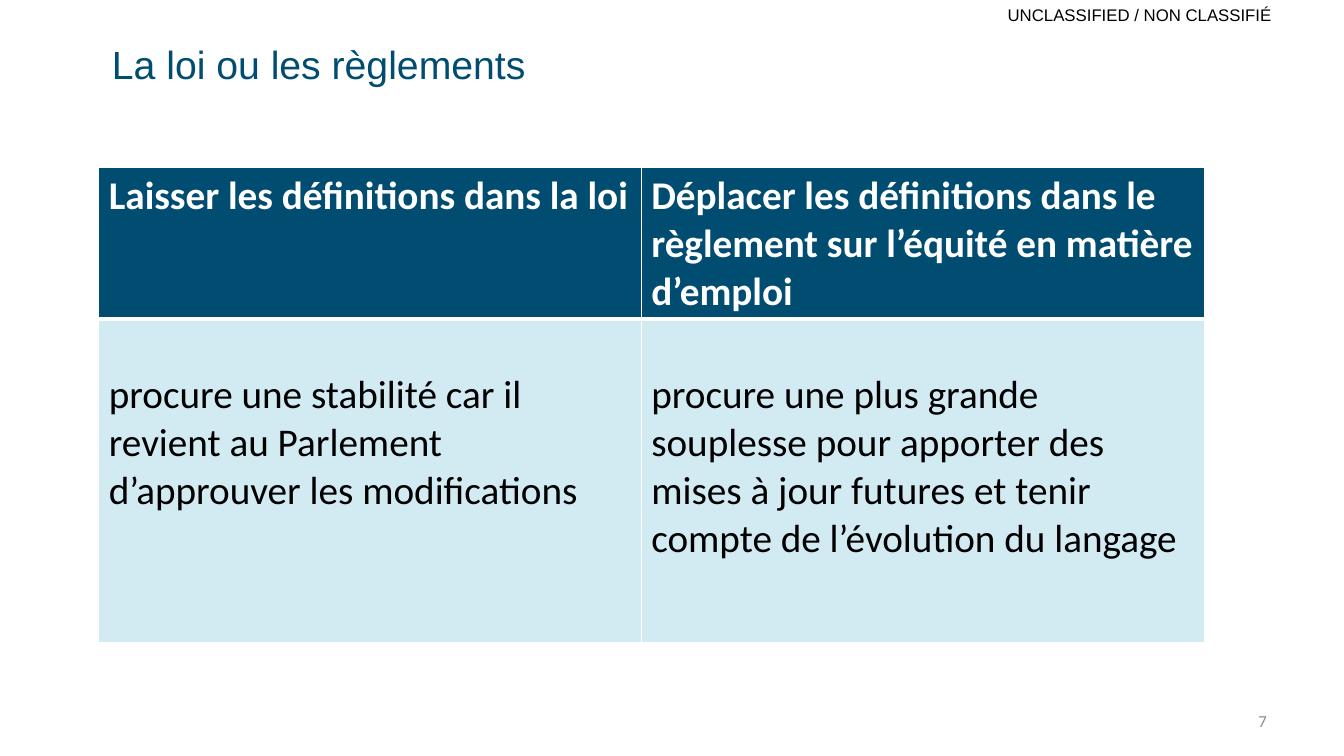
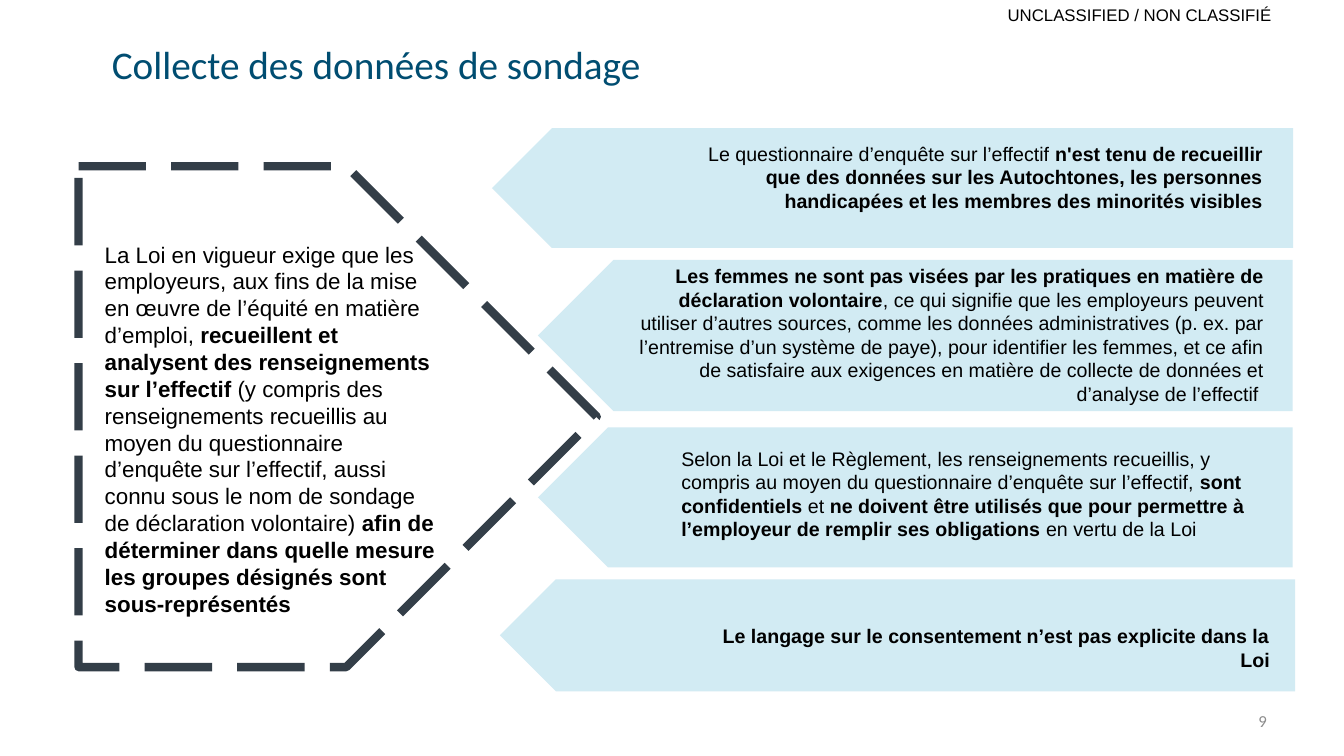
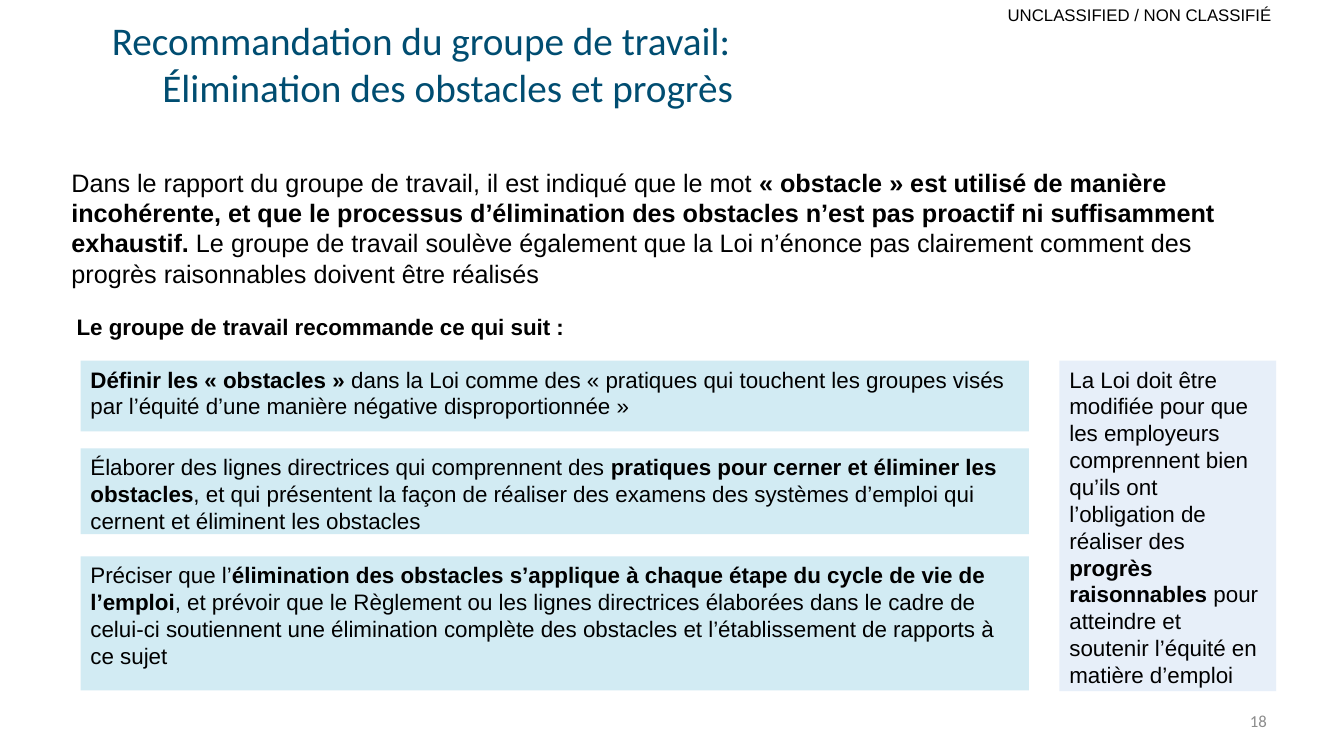
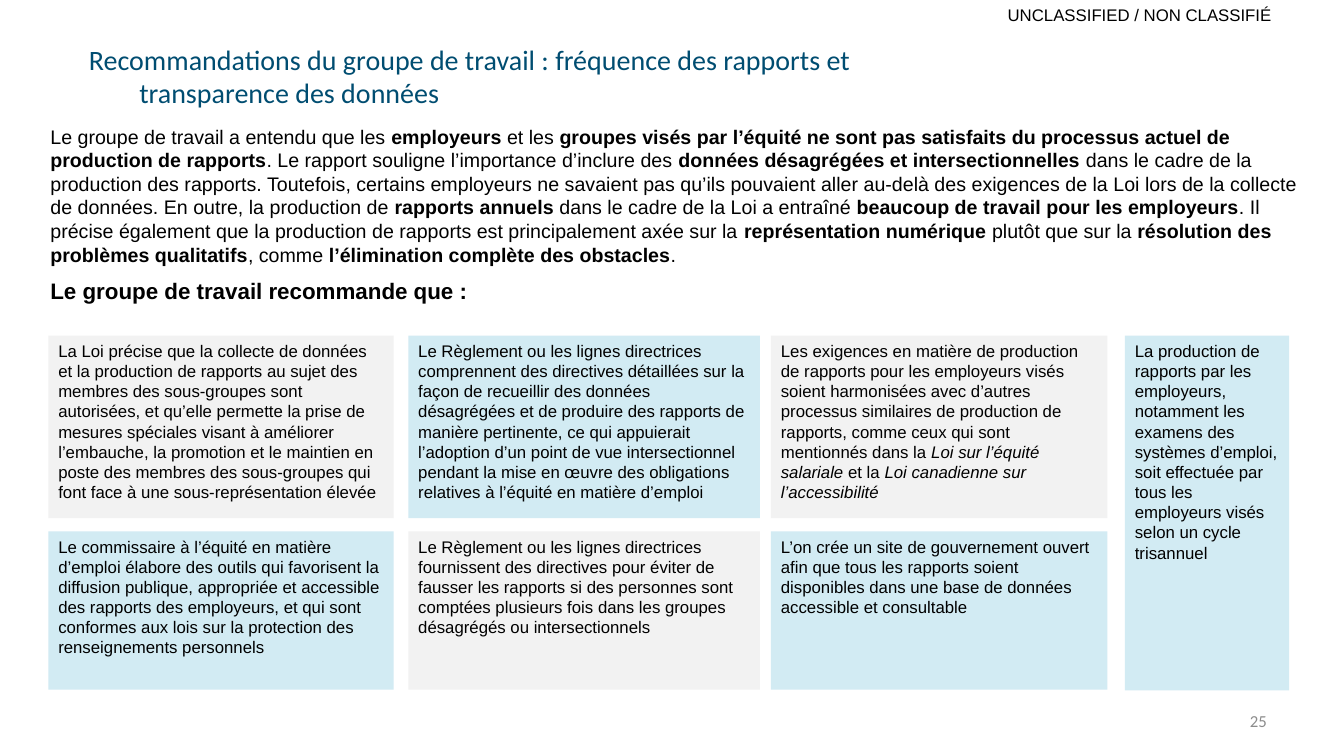
"""Build four slides on employment equity law: tables, arrows and recommendations."""
from lxml import etree
from pptx import Presentation
from pptx.dml.color import RGBColor
from pptx.enum import dml, shapes, text
from pptx.oxml.ns import qn
from pptx.util import Cm, Pt

HUES = {
    "navy": "004D71", "pale": "D2EBF3", "mist": "E7EFF9", "light": "F2F2F2",
    "slate": "333E48", "grey": "8C8C8C", "black": "000000", "white": "FFFFFF",
}
LEFT, RIGHT = text.PP_ALIGN.LEFT, text.PP_ALIGN.RIGHT
TOP, MIDDLE = text.MSO_ANCHOR.TOP, text.MSO_ANCHOR.MIDDLE


def write(frame, words, size, hue="black", face="Arial", align=LEFT, mark="bold"):
    """Fill a text frame; parts between bars take the mark."""
    frame.word_wrap = True
    para = frame.paragraphs[0]
    para.alignment = align
    for n, part in enumerate(words.split("|")):
        if part:
            run = para.add_run()
            run.text = part
            run.font.name, run.font.size = face, Pt(size)
            run.font.color.rgb = RGBColor.from_string(HUES[hue])
            setattr(run.font, mark, n % 2 == 1)
    return para


def box(slide, place, words, size, fill=None, anchor=TOP, **style):
    """Add a text box, or a filled rectangle when a fill is named."""
    spot = [Cm(v) for v in place]
    if fill:
        item = slide.shapes.add_shape(shapes.MSO_SHAPE.RECTANGLE, *spot)
        item.shadow.inherit = False
        item.fill.solid()
        item.fill.fore_color.rgb = RGBColor.from_string(HUES[fill])
        item.line.fill.background()
    else:
        item = slide.shapes.add_textbox(*spot)
    item.text_frame.vertical_anchor = anchor
    write(item.text_frame, words, size, **style)
    return item


deck = Presentation()
deck.slide_width, deck.slide_height = Cm(33.87), Cm(19.05)
plain = deck.slide_layouts[5]
head = plain.placeholders[0]
head.left, head.top, head.width, head.height = Cm(2.82), Cm(0.38), Cm(20.12), Cm(2.44)

heads = [
    ("7", "La loi ou les règlements", 28, "Arial"),
    ("9", "Collecte des données de sondage", 28, "Calibri"),
    ("18", "Recommandation du groupe de travail: Élimination des obstacles et progrès", 28, "Calibri"),
    ("25", "Recommandations du groupe de travail : fréquence des rapports et transparence des données", 20, "Calibri"),
]
for page, words, size, face in heads:
    slide = deck.slides.add_slide(plain)
    frame = slide.shapes.title.text_frame
    frame.auto_size = text.MSO_AUTO_SIZE.NONE
    frame.vertical_anchor = MIDDLE
    frame.margin_left = frame.margin_right = frame.margin_top = frame.margin_bottom = 0
    para = write(frame, words, size, "navy", face)
    props = para._p.get_or_add_pPr()
    props.set("marL", str(Cm(1.27)))
    props.set("indent", str(Cm(-1.27)))
    label = box(slide, (23.62, 0.13, 8.43, 0.51), "UNCLASSIFIED / NON CLASSIFIÉ", 12,
                anchor=MIDDLE, align=RIGHT).text_frame
    label.margin_left = label.margin_right = label.margin_top = label.margin_bottom = 0
    box(slide, (24.28, 17.65, 7.9, 1.02), page, 12, anchor=MIDDLE,
        hue="grey", face="Calibri", align=RIGHT)
law, survey, hurdles, reports = deck.slides

wides, talls = (13.67, 14.2), (3.78, 8.15)
grid = law.shapes.add_table(2, 2, Cm(2.49), Cm(4.22), Cm(sum(wides)), Cm(sum(talls))).table
grid.horz_banding = False
for n in range(2):
    grid.columns[n].width, grid.rows[n].height = Cm(wides[n]), Cm(talls[n])
rows = [
    ("|Laisser les définitions dans la loi|",
     "|Déplacer les définitions dans le règlement sur l’équité en matière d’emploi|"),
    ("procure une stabilité car il revient au Parlement d’approuver les modifications",
     "procure une plus grande souplesse pour apporter des mises à jour futures et tenir compte de l’évolution du langage"),
]
for r, row in enumerate(rows):
    for c, words in enumerate(row):
        cell = grid.cell(r, c)
        write(cell.text_frame, words, 28, ("white", "black")[r], "Calibri")
        cell.margin_top = Cm((0.13, 1.33)[r])
        props = cell._tc.get_or_add_tcPr()
        for side in "LRTB":
            thick = 3 if (r, side) in ((0, "B"), (1, "T")) else 1
            edge = etree.SubElement(props, qn("a:ln" + side), w=str(Pt(thick)))
            paint = etree.SubElement(edge, qn("a:solidFill"))
            etree.SubElement(paint, qn("a:srgbClr"), val=HUES["white"])
        cell.fill.solid()
        cell.fill.fore_color.rgb = RGBColor.from_string(HUES[("navy", "pale")[r]])

plate = survey.shapes.add_shape(shapes.MSO_SHAPE.PENTAGON, Cm(1.98), Cm(4.19), Cm(13.06), Cm(12.62))
plate.shadow.inherit = False
plate.fill.background()
plate.line.color.rgb = RGBColor.from_string(HUES["slate"])
plate.line.width = Pt(6)
plate.line.dash_style = dml.MSO_LINE.LONG_DASH
box(survey, (2.39, 5.94, 8.86, 9.83),
    "La Loi en vigueur exige que les employeurs, aux fins de la mise en œuvre de l’équité en matière d’emploi, "
    "|recueillent et analysent des renseignements sur l’effectif |(y compris des renseignements recueillis au "
    "moyen du questionnaire d’enquête sur l’effectif, aussi connu sous le nom de sondage de déclaration "
    "volontaire) |afin de déterminer dans quelle mesure les groupes désignés sont sous-représentés|", 16)
arrows = [
    ((12.4, 3.23, 20.19, 3.02), (16.92, 3.45, 15.16, 2.06), RIGHT,
     "Le questionnaire d’enquête sur l’effectif |n'est tenu de recueillir que des données sur les Autochtones, "
     "les personnes handicapées et les membres des minorités visibles|"),
    ((13.56, 6.55, 19.02, 3.81), (15.52, 6.53, 16.59, 3.84), RIGHT,
     "|Les femmes ne sont pas visées par les pratiques en matière de déclaration volontaire|, ce qui signifie que "
     "les employeurs peuvent utiliser d’autres sources, comme les données administratives (p. ex. par l’entremise "
     "d’un système de paye), pour identifier les femmes, et ce afin de satisfaire aux exigences en matière de "
     "collecte de données et d’analyse de l’effectif "),
    ((13.56, 10.77, 19.02, 3.53), (16.92, 11.13, 15.32, 2.64), LEFT,
     "Selon la Loi et le Règlement, les renseignements recueillis, y compris au moyen du questionnaire d’enquête "
     "sur l’effectif, |sont confidentiels |et |ne doivent être utilisés que pour permettre à l’employeur de "
     "remplir ses obligations |en vertu de la Loi"),
    ((12.6, 14.6, 20.04, 2.82), (17.09, 15.6, 15.16, 0.86), RIGHT,
     "|Le langage sur le consentement n’est pas explicite dans la Loi|"),
]
for place, spot, align, words in arrows:
    arrow = survey.shapes.add_shape(shapes.MSO_SHAPE.PENTAGON, *[Cm(v) for v in place])
    arrow.shadow.inherit = False
    arrow.fill.solid()
    arrow.fill.fore_color.rgb = RGBColor.from_string(HUES["pale"])
    arrow.line.fill.background()
    arrow.element.spPr.find(qn("a:xfrm")).set("flipH", "1")
    box(survey, spot, words, 14, align=align)

box(hurdles, (1.55, 4.09, 29.87, 3.33),
    "Dans le rapport du groupe de travail, il est indiqué que le mot |« obstacle » est utilisé de manière "
    "incohérente, et que le processus d’élimination des obstacles n’est pas proactif ni suffisamment exhaustif.| "
    "Le groupe de travail soulève également que la Loi n’énonce pas clairement comment des progrès raisonnables "
    "doivent être réalisés", 18)
box(hurdles, (1.68, 7.77, 16.94, 0.94), "|Le groupe de travail recommande ce qui suit :|", 16)
steps = [
    (9.09, 1.78, "|Définir les « obstacles »| dans la Loi comme des « pratiques qui touchent les groupes visés par "
     "l’équité d’une manière négative disproportionnée »"),
    (11.3, 2.16, "Élaborer des lignes directrices qui comprennent des |pratiques pour cerner et éliminer les "
     "obstacles|, et qui présentent la façon de réaliser des examens des systèmes d’emploi qui cernent et "
     "éliminent les obstacles"),
    (14.02, 3.38, "Préciser que l’|élimination des obstacles s’applique à chaque étape du cycle de vie de "
     "l’emploi|, et prévoir que le Règlement ou les lignes directrices élaborées dans le cadre de celui-ci "
     "soutiennent une élimination complète des obstacles et l’établissement de rapports à ce sujet"),
]
for top, tall, words in steps:
    box(hurdles, (2.03, top, 23.9, tall), words, 16, "pale")
box(hurdles, (26.7, 9.09, 5.46, 8.33),
    "La Loi doit être modifiée pour que les employeurs comprennent bien qu’ils ont l’obligation de réaliser des "
    "|progrès raisonnables |pour atteindre et soutenir l’équité en matière d’emploi", 16, "mist")

reports.shapes.title.left, reports.shapes.title.top = Cm(2.24), Cm(0.69)
reports.shapes.title.width, reports.shapes.title.height = head.width, head.height
box(reports, (1.02, 3.02, 32, 3.84),
    "Le groupe de travail a entendu que les |employeurs |et les |groupes visés par l’équité ne sont pas satisfaits "
    "du processus actuel de production de rapports|. Le rapport souligne l’importance d’inclure des |données "
    "désagrégées et intersectionnelles |dans le cadre de la production des rapports. Toutefois, certains employeurs "
    "ne savaient pas qu’ils pouvaient aller au-delà des exigences de la Loi lors de la collecte de données. En "
    "outre, la production de |rapports annuels |dans le cadre de la Loi a entraîné |beaucoup de travail pour les "
    "employeurs|. Il précise également que la production de rapports est principalement axée sur la "
    "|représentation numérique |plutôt que sur la |résolution des problèmes qualitatifs|, comme |l’élimination "
    "complète des obstacles|.", 14)
box(reports, (1.02, 6.86, 16.94, 0.94), "|Le groupe de travail recommande que :|", 16)
cols = [
    (1.22, 8.7, (
        "La Loi précise que la collecte de données et la production de rapports au sujet des membres des "
        "sous-groupes sont autorisées, et qu’elle permette la prise de mesures spéciales visant à améliorer "
        "l’embauche, la promotion et le maintien en poste des membres des sous-groupes qui font face à une "
        "sous-représentation élevée",
        "Le commissaire à l’équité en matière d’emploi élabore des outils qui favorisent la diffusion publique, "
        "appropriée et accessible des rapports des employeurs, et qui sont conformes aux lois sur la protection "
        "des renseignements personnels")),
    (10.29, 8.86, (
        "Le Règlement ou les lignes directrices comprennent des directives détaillées sur la façon de recueillir "
        "des données désagrégées et de produire des rapports de manière pertinente, ce qui appuierait l’adoption "
        "d’un point de vue intersectionnel pendant la mise en œuvre des obligations relatives à l’équité en "
        "matière d’emploi",
        "Le Règlement ou les lignes directrices fournissent des directives pour éviter de fausser les rapports si "
        "des personnes sont comptées plusieurs fois dans les groupes désagrégés ou intersectionnels")),
    (19.43, 8.48, (
        "Les exigences en matière de production de rapports pour les employeurs visés soient harmonisées avec "
        "d’autres processus similaires de production de rapports, comme ceux qui sont mentionnés dans la |Loi sur "
        "l’équité salariale| et la |Loi canadienne sur l’accessibilité|",
        "L’on crée un site de gouvernement ouvert afin que tous les rapports soient disponibles dans une base de "
        "données accessible et consultable")),
]
for c, (left, wide, pair) in enumerate(cols):
    for r, words in enumerate(pair):
        place = (left, (8.46, 13.39)[r], wide, (4.6, 3.99)[r])
        box(reports, place, words, 12, ("light", "pale")[(r + c) % 2], mark="italic")
box(reports, (28.35, 8.46, 4.14, 8.94),
    "La production de rapports par les employeurs, notamment les examens des systèmes d’emploi, soit effectuée par "
    "tous les employeurs visés selon un cycle trisannuel", 12, "pale")

deck.save("out.pptx")
